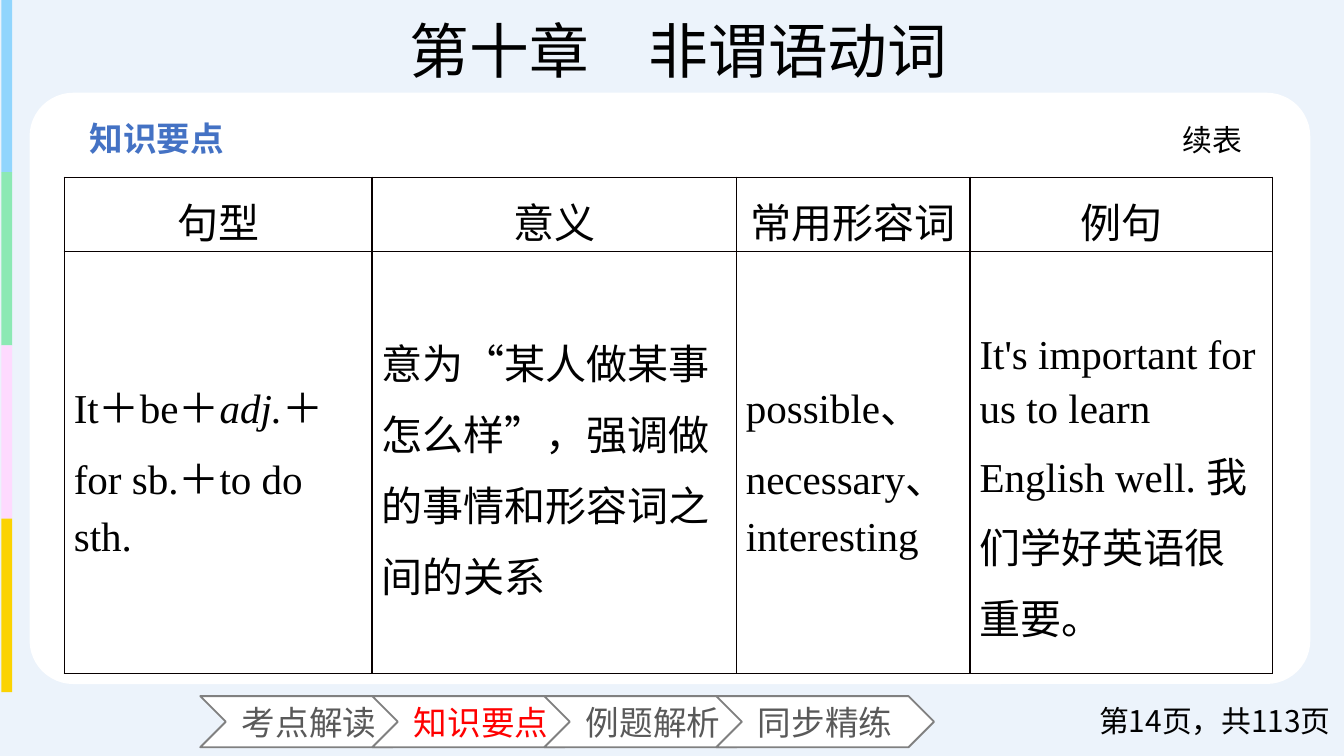
from dataclasses import dataclass

from lxml import etree
from pptx import Presentation
from pptx.dml.color import RGBColor
from pptx.enum.shapes import MSO_SHAPE
from pptx.enum.text import MSO_ANCHOR, PP_ALIGN
from pptx.oxml.ns import qn
from pptx.util import Inches, Pt

LEFT, CENTER, RIGHT = PP_ALIGN.LEFT, PP_ALIGN.CENTER, PP_ALIGN.RIGHT
TOP, MIDDLE = MSO_ANCHOR.TOP, MSO_ANCHOR.MIDDLE
RECTANGLE, ROUNDED, CHEVRON = MSO_SHAPE.RECTANGLE, MSO_SHAPE.ROUNDED_RECTANGLE, MSO_SHAPE.CHEVRON


@dataclass(frozen=True)
class Theme:
    latin: str = "Times New Roman"
    chinese: str = "Noto Sans CJK SC"
    background: str = "ECF3FB"
    white: str = "FFFFFF"
    black: str = "000000"
    accent: str = "4472C4"
    active: str = "FF0000"
    inactive: str = "595959"
    outline: str = "808080"
    border: str = "080000"
    title_size: int = 32
    table_size: int = 22
    label_size: int = 18
    small_size: int = 16


THEME = Theme()

# Content
TITLE = "第十章　非谓语动词"
SECTION = "知识要点"
CONTINUED = "续表"
PAGE = "第14页，共113页"
STEPS = ["考点解读", "知识要点", "例题解析", "同步精练"]
STRIPES = ["91D5FD", "8CE9B4", "FEDAFE", "FBD302"]
COLUMN_WIDTHS = [2.29, 2.71, 1.74, 2.25]
ROW_HEIGHTS = [0.55, 3.14]
# A cell is a list of (text, italic) runs
ROWS = [
    [[("句型", False)], [("意义", False)], [("常用形容词", False)], [("例句", False)]],
    [
        [("It＋be＋", False), ("adj.", True), ("＋for sb.＋to do sth.", False)],
        [("意为“某人做某事怎么样”，强调做的事情和形容词之间的关系", False)],
        [("possible、 necessary、 interesting", False)],
        [("It's important for us to learn English well. 我们学好英语很重要。", False)],
    ],
]
EXAMPLE_TOP_MARGIN = 0.34


def write_text(frame, runs, size, color=THEME.black, font=THEME.chinese, bold=False,
               align=LEFT, spacing=None):
    if isinstance(runs, str):
        runs = [(runs, False)]
    frame.word_wrap = True
    paragraph = frame.paragraphs[0]
    paragraph.alignment = align
    if spacing:
        paragraph.line_spacing = spacing
    for text, italic in runs:
        run = paragraph.add_run()
        run.text = text
        run.font.name = font
        run.font.size = Pt(size)
        run.font.bold = bold
        run.font.italic = italic
        run.font.color.rgb = RGBColor.from_string(color)
        east_asian = etree.Element(qn("a:ea"), typeface=THEME.chinese)
        run.font._element.find(qn("a:latin")).addnext(east_asian)


def add_box(slide, kind, left, top, width, height, fill, line=None):
    shape = slide.shapes.add_shape(kind, Inches(left), Inches(top), Inches(width), Inches(height))
    shape.shadow.inherit = False
    shape.fill.solid()
    shape.fill.fore_color.rgb = RGBColor.from_string(fill)
    if line:
        shape.line.color.rgb = RGBColor.from_string(line)
        shape.line.width = Pt(1)
    else:
        shape.line.fill.background()
    return shape


def add_label(slide, text, left, top, width, height, anchor=TOP, **text_format):
    label = slide.shapes.add_textbox(Inches(left), Inches(top), Inches(width), Inches(height))
    label.text_frame.vertical_anchor = anchor
    write_text(label.text_frame, text, **text_format)


def set_borders(cell):
    properties = cell._tc.get_or_add_tcPr()
    for index, side in enumerate(("lnL", "lnR", "lnT", "lnB")):
        border = etree.Element(qn(f"a:{side}"), w=str(Pt(1)))
        fill = etree.SubElement(border, qn("a:solidFill"))
        etree.SubElement(fill, qn("a:srgbClr"), val=THEME.border)
        properties.insert(index, border)


def add_grammar_table(slide, left, top):
    frame = slide.shapes.add_table(len(ROWS), len(COLUMN_WIDTHS), Inches(left), Inches(top),
                                   Inches(sum(COLUMN_WIDTHS)), Inches(sum(ROW_HEIGHTS)))
    table = frame.table
    table.first_row = table.horz_banding = False
    for column, width in zip(table.columns, COLUMN_WIDTHS):
        column.width = Inches(width)
    for row, height in zip(table.rows, ROW_HEIGHTS):
        row.height = Inches(height)
    for row_index, row in enumerate(ROWS):
        for column_index, runs in enumerate(row):
            cell = table.cell(row_index, column_index)
            cell.fill.background()
            cell.vertical_anchor = MIDDLE
            cell.margin_left = cell.margin_right = Inches(0.07)
            cell.margin_top = cell.margin_bottom = 0
            write_text(cell.text_frame, runs, THEME.table_size, font=THEME.latin,
                       align=LEFT if row_index else CENTER, spacing=1.2)
            set_borders(cell)
    # The example sits lower than the other cells
    table.cell(1, 3).margin_top = Inches(EXAMPLE_TOP_MARGIN)


def main():
    # A 16:9 slide
    presentation = Presentation()
    presentation.slide_width = Inches(10)
    presentation.slide_height = presentation.slide_width * 9 // 16
    slide = presentation.slides.add_slide(presentation.slide_layouts[5])

    # Background, side stripes and card
    slide.background.fill.solid()
    slide.background.fill.fore_color.rgb = RGBColor.from_string(THEME.background)
    for index, color in enumerate(STRIPES):
        add_box(slide, RECTANGLE, 0.01, -0.01 + 1.29 * index, 0.08, 1.29, color)
    card = add_box(slide, ROUNDED, 0.22, 0.69, 9.53, 4.4, THEME.white)
    card.adjustments[0] = 0.074

    # Headings
    title = slide.shapes.title
    title.left, title.top = Inches(1.76), Inches(0.05)
    title.width, title.height = Inches(6.58), Inches(0.64)
    write_text(title.text_frame, TITLE, THEME.title_size, font=THEME.latin, align=CENTER)
    add_label(slide, SECTION, 0.57, 0.83, 1.8, 0.4,
              size=THEME.label_size, color=THEME.accent, bold=True)
    add_label(slide, CONTINUED, 8.7, 0.86, 0.77, 0.27, size=THEME.small_size)

    add_grammar_table(slide, 0.48, 1.32)

    # Chapter steps, with the current one highlighted
    for index, step in enumerate(STEPS):
        chevron = add_box(slide, CHEVRON, 1.49 + 1.28 * index, 5.18, 1.62, 0.38,
                          THEME.white, THEME.outline)
        chevron.text_frame.vertical_anchor = MIDDLE
        write_text(chevron.text_frame, step, THEME.label_size, align=CENTER,
                   color=THEME.active if step == SECTION else THEME.inactive)

    add_label(slide, PAGE, 7.97, 5.21, 2.03, 0.3, anchor=MIDDLE,
              size=THEME.small_size, align=RIGHT)
    presentation.save("out.pptx")


if __name__ == "__main__":
    main()
